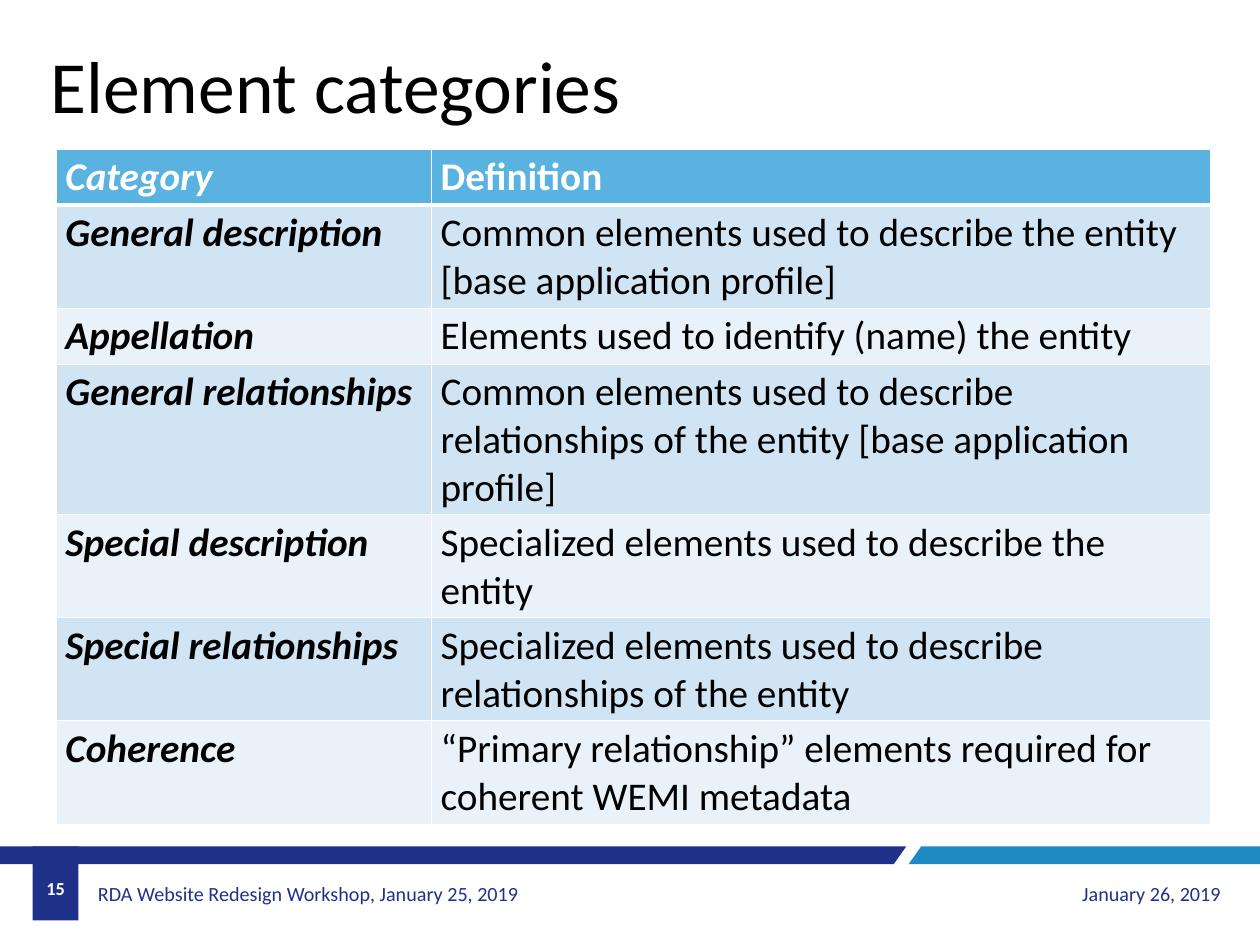
from lxml import etree
from pptx import Presentation
from pptx.dml.color import RGBColor
from pptx.enum.shapes import MSO_SHAPE
from pptx.enum.text import MSO_ANCHOR as Anchor, MSO_AUTO_SIZE as AutoSize, PP_ALIGN as Align
from pptx.oxml.ns import qn
from pptx.util import Cm, Pt

NAVY = RGBColor(0x20, 0x31, 0x89)
BLUE = RGBColor(0x1D, 0x8B, 0xC1)
HEADER_BLUE = RGBColor(0x59, 0xB2, 0xDF)
BAND_DARK = RGBColor(0xD1, 0xE4, 0xF3)
BAND_LIGHT = RGBColor(0xEA, 0xF2, 0xF9)
WHITE = RGBColor(0xFF, 0xFF, 0xFF)
BLACK = RGBColor(0x00, 0x00, 0x00)

SLIDE_WIDTH = 36.27
BAR_TOP, BAR_BOTTOM = 24.36, 24.87


def add_run(paragraph, text, size, color, bold=False, italic=False):
    run = paragraph.add_run()
    run.text = text
    run.font.name = "Calibri"
    run.font.size = Pt(size)
    run.font.color.rgb = color
    run.font.bold = bold
    run.font.italic = italic


def add_border(cell, side, width):
    """Draw a white line, width in points, on side L, R, T or B of the cell."""
    properties = cell._tc.get_or_add_tcPr()
    line = etree.SubElement(properties, qn(f"a:ln{side}"), w=str(Pt(width)))
    fill = etree.SubElement(line, qn("a:solidFill"))
    etree.SubElement(fill, qn("a:srgbClr"), val=str(WHITE))


presentation = Presentation()
presentation.slide_width = Cm(SLIDE_WIDTH)
presentation.slide_height = Cm(27.2)
slide = presentation.slides.add_slide(presentation.slide_layouts[5])

# Footer bars and page tab
bars = [
    (NAVY, [(26.09, BAR_TOP), (0, BAR_TOP), (0, BAR_BOTTOM), (25.73, BAR_BOTTOM)]),
    (BLUE, [(SLIDE_WIDTH, BAR_TOP), (26.52, BAR_TOP), (26.16, BAR_BOTTOM),
            (SLIDE_WIDTH, BAR_BOTTOM)]),
]
footer_shapes = []
for color, corners in bars:
    points = [(Cm(x), Cm(y)) for x, y in corners]
    builder = slide.shapes.build_freeform(*points[0])
    builder.add_line_segments(points[1:], close=True)
    footer_shapes.append((builder.convert_to_shape(), color))
page_tab = slide.shapes.add_shape(
    MSO_SHAPE.RECTANGLE, Cm(0.94), Cm(BAR_TOP), Cm(1.32), Cm(2.13))
footer_shapes.append((page_tab, NAVY))
for shape, color in footer_shapes:
    shape.shadow.inherit = False
    shape.fill.solid()
    shape.fill.fore_color.rgb = color
    shape.line.fill.background()

# Footer texts: text, left, top, width, side inset, alignment, size, colour, bold
footer_texts = [
    ("RDA Website Redesign Workshop, January 25, 2019",
     2.64, 25.02, 14.02, 0.18, Align.LEFT, 16.4, NAVY, False),
    ("January 26, 2019", 26.09, 25.02, 9.3, 0.25, Align.RIGHT, 16.4, NAVY, False),
    ("15", 0.94, BAR_BOTTOM, 1.32, 0.25, Align.CENTER, 14.9, WHITE, True),
]
for text, left, top, width, inset, alignment, size, color, bold in footer_texts:
    box = slide.shapes.add_textbox(Cm(left), Cm(top), Cm(width), Cm(1.4))
    frame = box.text_frame
    frame.word_wrap = True
    frame.vertical_anchor = Anchor.MIDDLE
    frame.margin_left = frame.margin_right = Cm(inset)
    frame.paragraphs[0].alignment = alignment
    add_run(frame.paragraphs[0], text, size, color, bold)

# Title
title = slide.shapes.title
title.left, title.top, title.width, title.height = Cm(1.2), Cm(1.02), Cm(17.1), Cm(2.82)
title_frame = title.text_frame
title_frame.word_wrap = False
title_frame.auto_size = AutoSize.SHAPE_TO_FIT_TEXT
title_frame.vertical_anchor = Anchor.TOP
title_frame.paragraphs[0].alignment = Align.LEFT
add_run(title_frame.paragraphs[0], "Element categories", 60, BLACK)

# Table: category, definition, lines of text in the row
categories = [
    ("Category", "Definition", 1),
    ("General description",
     "Common elements used to describe the entity [base application profile]", 2),
    ("Appellation", "Elements used to identify (name) the entity", 1),
    ("General relationships",
     "Common elements used to describe relationships of the entity "
     "[base application profile]", 3),
    ("Special description", "Specialized elements used to describe the entity", 2),
    ("Special relationships",
     "Specialized elements used to describe relationships of the entity", 2),
    ("Coherence",
     "“Primary relationship” elements required for coherent WEMI metadata", 2),
]
table = slide.shapes.add_table(
    len(categories), 2, Cm(1.63), Cm(4.29), Cm(33.23), Cm(19.38)).table
table.columns[0].width = Cm(10.8)
table.columns[1].width = Cm(22.43)
for row, (category, definition, lines) in enumerate(categories):
    table.rows[row].height = Cm(0.25 + 1.36 * lines)
    is_header = row == 0
    band = HEADER_BLUE if is_header else BAND_DARK if row % 2 else BAND_LIGHT
    for column, text in enumerate((category, definition)):
        cell = table.cell(row, column)
        add_border(cell, "L", 1)
        add_border(cell, "R", 1)
        add_border(cell, "T", 3 if row == 1 else 1)
        add_border(cell, "B", 3 if is_header else 1)
        cell.fill.solid()
        cell.fill.fore_color.rgb = band
        is_category = column == 0
        add_run(cell.text_frame.paragraphs[0], text, 32, WHITE if is_header else BLACK,
                bold=is_header or is_category, italic=is_category)

presentation.save("out.pptx")
